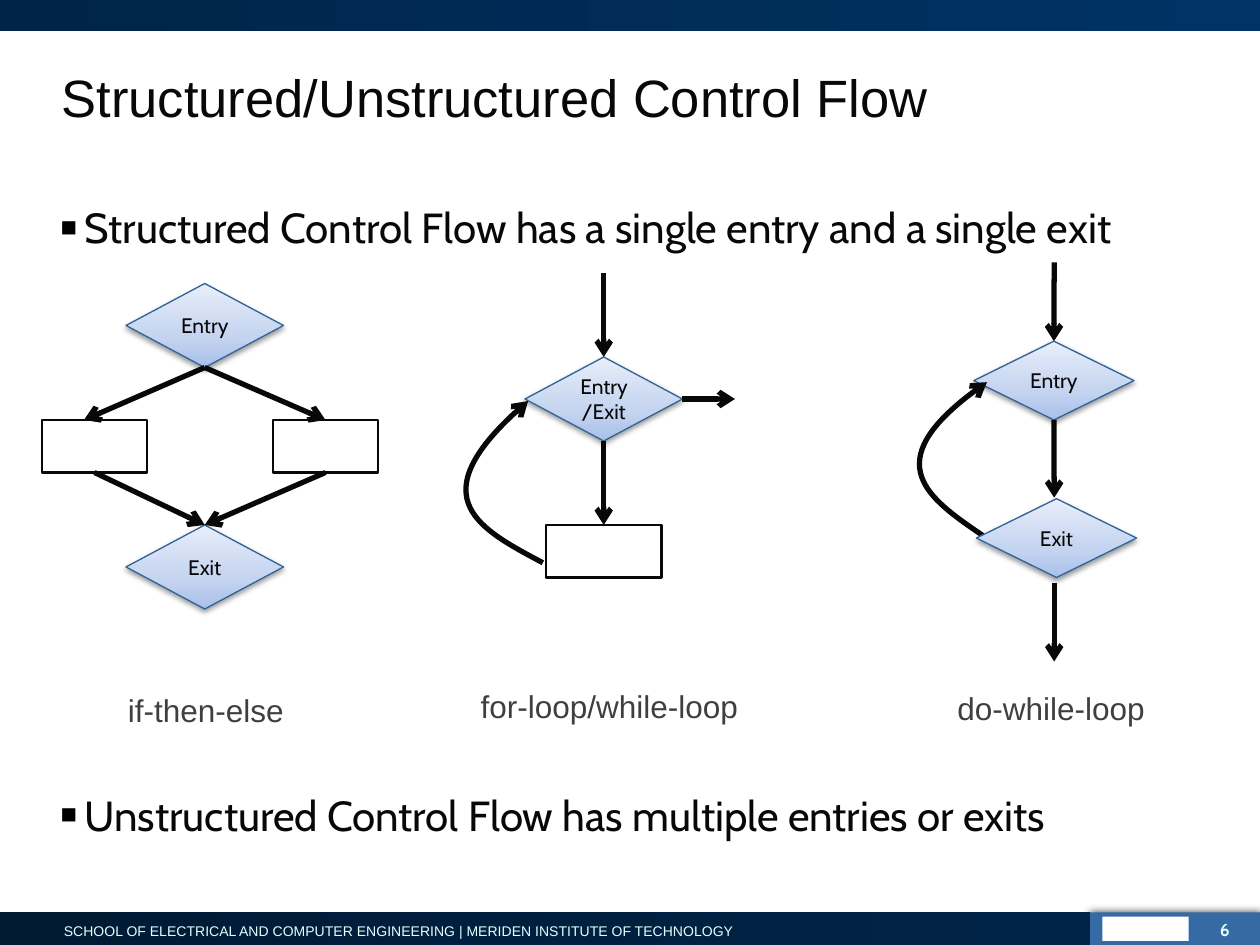
from dataclasses import dataclass

from lxml import etree
from pptx import Presentation
from pptx.dml.color import RGBColor
from pptx.enum.shapes import MSO_CONNECTOR, MSO_SHAPE
from pptx.enum.text import MSO_ANCHOR, PP_ALIGN
from pptx.oxml.ns import qn
from pptx.slide import Slide
from pptx.util import Inches, Pt

RECTANGLE, DIAMOND = MSO_SHAPE.RECTANGLE, MSO_SHAPE.DIAMOND
STRAIGHT = MSO_CONNECTOR.STRAIGHT
LEFT, CENTER, RIGHT = PP_ALIGN.LEFT, PP_ALIGN.CENTER, PP_ALIGN.RIGHT
TOP, MIDDLE = MSO_ANCHOR.TOP, MSO_ANCHOR.MIDDLE
SITE_TOP, SITE_BOTTOM, SITE_RIGHT = 0, 2, 3

COLORS = {
    "ink": "080808", "caption": "3F3F3F", "pale": "E5FFFF", "white": "FFFFFF",
    "bullet": "000000", "node_line": "2F6498", "badge": "366AA4",
    "navy_dark": "001A34", "navy": "002448", "navy_light": "003366",
    "node_low": "A9C0E9", "node_mid": "C4D3EF", "node_high": "E8EEFA",
}
NODE_STOPS = [(0, "node_low"), (35, "node_mid"), (100, "node_high")]
COLS, ROWS = 120, 90  # square cells over the whole slide
CELL = Inches(10) / COLS


def rgb(name):
    return RGBColor.from_string(COLORS[name])


def child(parent, tag, **attributes):
    return etree.SubElement(parent, qn(tag), {k: str(v) for k, v in attributes.items()})


def fill_gradient(shape, stops, angle):
    shape.fill.gradient()
    shape.fill.gradient_angle = angle
    stop_list = shape.element.spPr.find(".//" + qn("a:gsLst"))
    stop_list.clear()
    for share, color in stops:
        stop = child(stop_list, "a:gs", pos=share * 1000)
        child(stop, "a:srgbClr", val=COLORS[color])


def add_shadow(shape, blur, distance, direction, opacity):
    effects = shape.element.spPr.find(qn("a:effectLst"))
    shadow = child(effects, "a:outerShdw", blurRad=Pt(blur), dist=Pt(distance),
                   dir=direction * 60000, rotWithShape=0)
    color = child(shadow, "a:srgbClr", val=COLORS["bullet"])
    child(color, "a:alpha", val=opacity * 1000)


def style_arrow(line_shape):
    line_shape.line.color.rgb = rgb("ink")
    line_shape.line.width = Pt(3)
    child(line_shape.element.spPr.find(qn("a:ln")), "a:tailEnd", type="arrow")


def format_text(frame, size, font, color, align=LEFT, anchor=TOP, bold=False):
    frame.vertical_anchor = anchor
    for paragraph in frame.paragraphs:
        paragraph.alignment = align
        for run in paragraph.runs:
            run.font.size, run.font.name, run.font.bold = Pt(size), font, bold
            run.font.color.rgb = rgb(color)


@dataclass
class Region:
    """A part of the slide whose contents are placed in cells from its corner."""
    slide: Slide
    left: float
    top: float

    def at(self, col, row):
        return round((self.left + col) * CELL), round((self.top + row) * CELL)

    def frame(self, col, row, width, height):
        return *self.at(col, row), round(width * CELL), round(height * CELL)

    def plain(self, kind, *cells):
        shape = self.slide.shapes.add_shape(kind, *self.frame(*cells))
        shape.shadow.inherit = False
        shape.fill.background()
        shape.line.fill.background()
        return shape

    def solid(self, color, *cells):
        shape = self.plain(RECTANGLE, *cells)
        shape.fill.solid()
        shape.fill.fore_color.rgb = rgb(color)
        return shape

    def block(self, *cells):
        shape = self.plain(RECTANGLE, *cells)
        shape.line.color.rgb = rgb("ink")
        shape.line.width = Pt(1.5)
        return shape

    def node(self, words, *cells):
        shape = self.plain(DIAMOND, *cells)
        fill_gradient(shape, NODE_STOPS, 90)
        shape.line.color.rgb = rgb("node_line")
        shape.line.width = Pt(0.75)
        add_shadow(shape, 3.1, 1.6, 90, 38)
        shape.text_frame.text = words
        format_text(shape.text_frame, 12, "Cabin", "ink", CENTER, MIDDLE)
        return shape

    def arrow(self, start, end):
        """Each end is a (col, row) pair or a (shape, connection site) pair."""
        spots = [(0, 0) if hasattr(e[0], "shape_id") else self.at(*e) for e in (start, end)]
        edge = self.slide.shapes.add_connector(STRAIGHT, *spots[0], *spots[1])
        for join, target in ((edge.begin_connect, start), (edge.end_connect, end)):
            if hasattr(target[0], "shape_id"):
                join(*target)
        style_arrow(edge)
        child(edge.element.spPr, "a:effectLst")

    def back_edge(self, start, *curve):
        builder = self.slide.shapes.build_freeform(*self.at(*start))
        builder.add_line_segments([self.at(*p) for p in curve], close=False)
        edge = builder.convert_to_shape()
        edge.shadow.inherit = False
        edge.fill.background()
        style_arrow(edge)
        # Turn the three segments into one Bézier curve
        outline = edge.element.spPr.find(".//" + qn("a:path"))
        segments = outline.findall(qn("a:lnTo"))
        bezier = child(outline, "a:cubicBezTo")
        for segment in segments:
            bezier.append(segment[0])
            outline.remove(segment)

    def text(self, words, cells, *style, wrap=True, **options):
        frame = self.slide.shapes.add_textbox(*self.frame(*cells)).text_frame
        frame.word_wrap = wrap
        frame.text = words
        format_text(frame, *style, **options)
        return frame

    def caption(self, words, *cells):
        self.text(words, cells, 18, "Arial", "caption")


def draw_bands(page):
    badge = page.solid("badge", 103.7, 86.9, 16.3, 3.1)
    add_shadow(badge, 5, 1, 0, 75)
    page.solid("white", 105, 87.3, 8.2, 2.3)  # emblem
    footer = page.plain(RECTANGLE, 0, 86.9, 103.8, 3.1)
    fill_gradient(footer, [(0, "navy_dark"), (100, "navy")], 0)
    page.text("SCHOOL OF ELECTRICAL AND COMPUTER ENGINEERING | MERIDEN INSTITUTE OF TECHNOLOGY",
              (4.9, 87.25, 66.4, 2.75), 8, "Arial", "pale", wrap=False)
    header = page.plain(RECTANGLE, 0, 0, COLS, 3)
    fill_gradient(header, [(0, "navy"), (100, "navy_light")], 0)
    page.text("6", (113.3, 86.9, 5, 2.75), 10, "Cabin", "pale", align=RIGHT, bold=True)


def draw_statements(page):
    page.text("Structured/Unstructured Control Flow", (4.7, 2.9, 111.6, 12.5),
              30, "Arial", "ink", anchor=MIDDLE)
    frame = page.text("Structured Control Flow has a single entry and a single exit\n"
                      "Unstructured Control Flow has multiple entries or exits",
                      (4.6, 18.6, 111.7, 63.7), 24, "Cabin", "ink")
    frame.paragraphs[1].space_before = Pt(307)  # room for the diagrams
    for paragraph in frame.paragraphs:
        properties = paragraph._p.get_or_add_pPr()
        properties.set("marL", str(Inches(0.19)))
        properties.set("indent", str(-Inches(0.19)))
        child(child(properties, "a:buClr"), "a:srgbClr", val=COLORS["bullet"])
        child(properties, "a:buSzPct", val=65000)
        child(properties, "a:buFont", typeface="Arial")
        child(properties, "a:buChar", char="■")


def draw_if_then_else(area):
    then_block, else_block = [area.block(col, 13, 10, 5) for col in (0, 22)]
    leave = area.node("Exit", 8, 23, 15, 8)
    entry = area.node("Entry", 8, 0, 15, 8)
    area.arrow((entry, SITE_BOTTOM), (4, 13))
    area.arrow((entry, SITE_BOTTOM), (else_block, SITE_TOP))
    for branch in (then_block, else_block):
        area.arrow((branch, SITE_BOTTOM), (leave, SITE_TOP))
    area.caption("if-then-else", 7, 38.2, 20, 4.8)


def draw_while_loop(area):
    test = area.node("Entry/Exit", 10, 8, 15, 8)
    body = area.block(12, 24, 11, 5)
    area.arrow((test, SITE_BOTTOM), (body, SITE_TOP))
    area.back_edge((11.7, 27.6), (5.7, 24.4), (-0.4, 21.3), (10.3, 12.2))
    area.arrow((test, SITE_RIGHT), (30, 12))
    area.arrow((17.5, 0), (test, SITE_TOP))
    area.caption("for-loop/while-loop", 4.6, 38.8, 29, 4.8)


def draw_do_while_loop(area):
    entry = area.node("Entry", 9.75, 7.5, 15.25, 7.5)
    area.arrow((entry, SITE_BOTTOM), (17.4, 22.4))
    area.back_edge((10.6, 26), (5.3, 22.4), (0.2, 18.8), (11, 11.4))
    area.arrow((17.4, 0), (entry, SITE_TOP))
    area.node("Exit", 10, 22.5, 15.25, 7.5)
    area.arrow((17.4, 30.5), (17.4, 38))
    area.caption("do-while-loop", 7, 40, 22, 4.8)


def main():
    deck = Presentation()
    deck.slide_width, deck.slide_height = round(COLS * CELL), round(ROWS * CELL)
    slide = deck.slides.add_slide(deck.slide_layouts[6])
    page = Region(slide, 0, 0)
    draw_bands(page)
    draw_statements(page)
    draw_if_then_else(Region(slide, 4, 27))
    draw_while_loop(Region(slide, 40, 26))
    draw_do_while_loop(Region(slide, 83, 25))
    deck.save("out.pptx")


if __name__ == "__main__":
    main()
